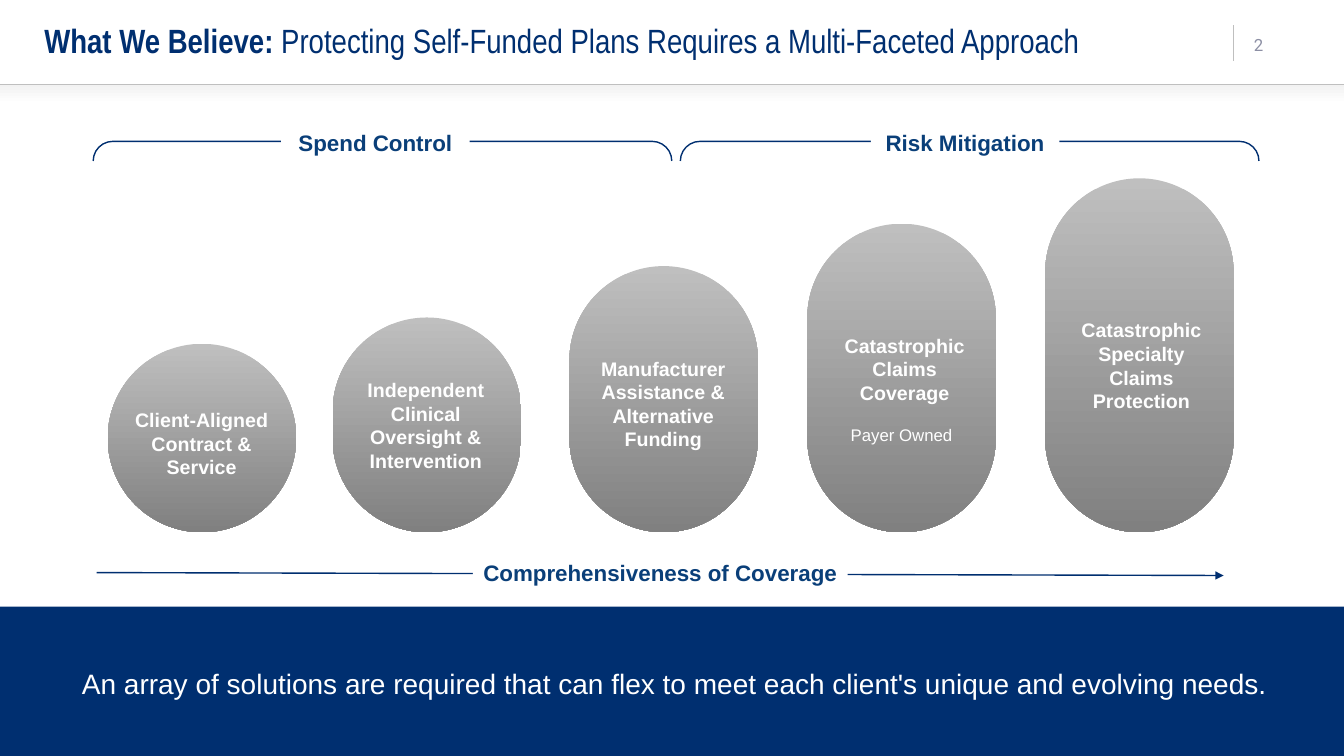
from dataclasses import dataclass

from lxml import etree
from pptx import Presentation
from pptx.dml.color import RGBColor
from pptx.enum.shapes import MSO_CONNECTOR, MSO_SHAPE
from pptx.enum.text import MSO_ANCHOR, MSO_AUTO_SIZE, PP_ALIGN
from pptx.oxml.ns import qn
from pptx.util import Pt

RECTANGLE, ELLIPSE = MSO_SHAPE.RECTANGLE, MSO_SHAPE.OVAL
PILL, BRACKET = MSO_SHAPE.ROUNDED_RECTANGLE, MSO_SHAPE.LEFT_BRACKET
STRAIGHT = MSO_CONNECTOR.STRAIGHT
LEFT, CENTER = PP_ALIGN.LEFT, PP_ALIGN.CENTER
MIDDLE = MSO_ANCHOR.MIDDLE
NO_FIT = MSO_AUTO_SIZE.NONE


@dataclass(frozen=True)
class Theme:
    navy: str = "002F70"
    label: str = "0A3F79"
    white: str = "FFFFFF"
    mist: str = "F2F2F2"
    silver: str = "BFBFBF"
    gray: str = "808080"
    number: str = "8C8FA4"
    title_size: int = 24
    message_size: int = 20
    label_size: int = 16
    pill_size: int = 14
    small_size: int = 12
    body_font: str = "Arial"
    title_font: str = "Arial Narrow"
    number_font: str = "Roboto"


theme = Theme()
deck = Presentation()
deck.slide_width, deck.slide_height = Pt(960), Pt(540)
page = deck.slides.add_slide(deck.slide_layouts[5])


def write(box, text, size, color, font=theme.body_font, bold=False, align=CENTER):
    """Append text to the box; a newline starts a paragraph, a vertical tab a line."""
    frame = box.text_frame
    frame.word_wrap = True
    for index, paragraph in enumerate(text.split("\n")):
        para = frame.add_paragraph() if index else frame.paragraphs[-1]
        para.alignment = align
        for position, line in enumerate(paragraph.split("\v")):
            if position:
                para.add_line_break()
            span = para.add_run()
            span.text = line
            span.font.name, span.font.size, span.font.bold = font, Pt(size), bold
            span.font.color.rgb = RGBColor.from_string(color)


def add_block(kind, left, top, width, height, *colors):
    """Add a borderless shape with a solid fill or a top-to-bottom gradient."""
    block = page.shapes.add_shape(kind, Pt(left), Pt(top), Pt(width), Pt(height))
    block.shadow.inherit = False
    block.line.fill.background()
    if len(colors) == 1:
        block.fill.solid()
        block.fill.fore_color.rgb = RGBColor.from_string(colors[0])
    elif colors:
        block.fill.gradient()
        block.fill.gradient_angle = 270
        for stop, color in zip(block.fill.gradient_stops, colors):
            stop.color.rgb = RGBColor.from_string(color)
    else:
        block.fill.background()
    return block


# Header: soft shade, title and page number
add_block(RECTANGLE, 0, 60.5, 960, 13.7, theme.mist, theme.white)

title = page.shapes.title
title.left, title.top, title.width, title.height = Pt(24.5), Pt(0), Pt(835.2), Pt(61.2)
title.text_frame.auto_size = NO_FIT
title.text_frame.vertical_anchor = MIDDLE
for text, bold in (
    ("What We Believe: ", True),
    ("Protecting Self-Funded Plans Requires a Multi-Faceted Approach", False),
):
    write(title, text, theme.title_size, theme.navy, theme.title_font, bold, LEFT)
title.text_frame.paragraphs[0].line_spacing = 0.9

number = page.shapes.add_textbox(Pt(888.5), Pt(17.3), Pt(51.1), Pt(28.8))
number.text_frame.vertical_anchor = MIDDLE
write(number, "2", theme.small_size, theme.number, theme.number_font, align=LEFT)

# Header rules and coverage arrow
for x1, y1, x2, y2, color, weight, arrow in (
    (0, 60.5, 960, 60.5, theme.silver, 0.5, False),
    (881.3, 18, 881.3, 43.9, theme.silver, 0.5, False),
    (69.1, 409, 874.1, 411.1, theme.navy, 1, True),
):
    rule = page.shapes.add_connector(STRAIGHT, Pt(x1), Pt(y1), Pt(x2), Pt(y2))
    rule.line.color.rgb = RGBColor.from_string(color)
    rule.line.width = Pt(weight)
    if arrow:
        etree.SubElement(rule.line._get_or_add_ln(), qn("a:tailEnd"), type="triangle")
    etree.SubElement(rule._element.spPr, qn("a:effectLst"))

# Brackets: turned a quarter so that they open downwards
bracket_depth, bracket_span = 14, 413.3
for center in (273.2, 692.6):
    bracket = add_block(BRACKET, center - bracket_depth / 2, 108 - bracket_span / 2,
                        bracket_depth, bracket_span)
    bracket.rotation = 90
    bracket.adjustments[0] = 1
    bracket.line.color.rgb = RGBColor.from_string(theme.navy)
    bracket.line.width = Pt(1)

# Labels that interrupt the brackets and the arrow
for text, left, top, width in (
    ("Spend Control", 200.9, 88.6, 134.6),
    ("Risk Mitigation", 622.1, 88.6, 134.6),
    ("Comprehensiveness of Coverage", 337.7, 396, 267.8),
):
    label = add_block(RECTANGLE, left, top, width, 26.6, theme.white)
    write(label, text, theme.label_size, theme.label, bold=True)

# Pills: equal width on a shared base line, rising to the right
pill_width, base = 134.6, 380.2
for kind, left, top, text, text_left, text_top, text_width in (
    (ELLIPSE, 77, 245.6, "Client-Aligned Contract & Service", 79.9, 288, 128.2),
    (PILL, 237.6, 226.8, "Independent Clinical\nOversight &\nIntervention",
     230.4, 266.4, 147.6),
    (PILL, 406.8, 190.1, "Manufacturer Assistance & Alternative Funding",
     409.7, 251.3, 128.2),
    (PILL, 576.7, 159.8, "Catastrophic\vClaims Coverage", 594, 234.7, 104.4),
    (PILL, 746.6, 127.4, "Catastrophic Specialty\vClaims Protection",
     757.4, 223.9, 115.9),
):
    pill = add_block(kind, left, top, pill_width, base - top, theme.silver, theme.gray)
    if kind == PILL:
        pill.adjustments[0] = 0.5
    caption = page.shapes.add_textbox(Pt(text_left), Pt(text_top), Pt(text_width), Pt(74.9))
    write(caption, text, theme.pill_size, theme.white, bold=True)

owner = page.shapes.add_textbox(Pt(576.7), Pt(300.2), Pt(pill_width), Pt(21.6))
write(owner, "Payer Owned", theme.small_size, theme.white)

# Closing message
add_block(RECTANGLE, 0, 433.4, 960, 106.6, theme.navy)
message = page.shapes.add_textbox(Pt(39.6), Pt(472.3), Pt(884.9), Pt(31.7))
write(message, "An array of solutions are required that can flex to meet each client's "
      "unique and evolving needs.", theme.message_size, theme.white)

deck.save("out.pptx")
